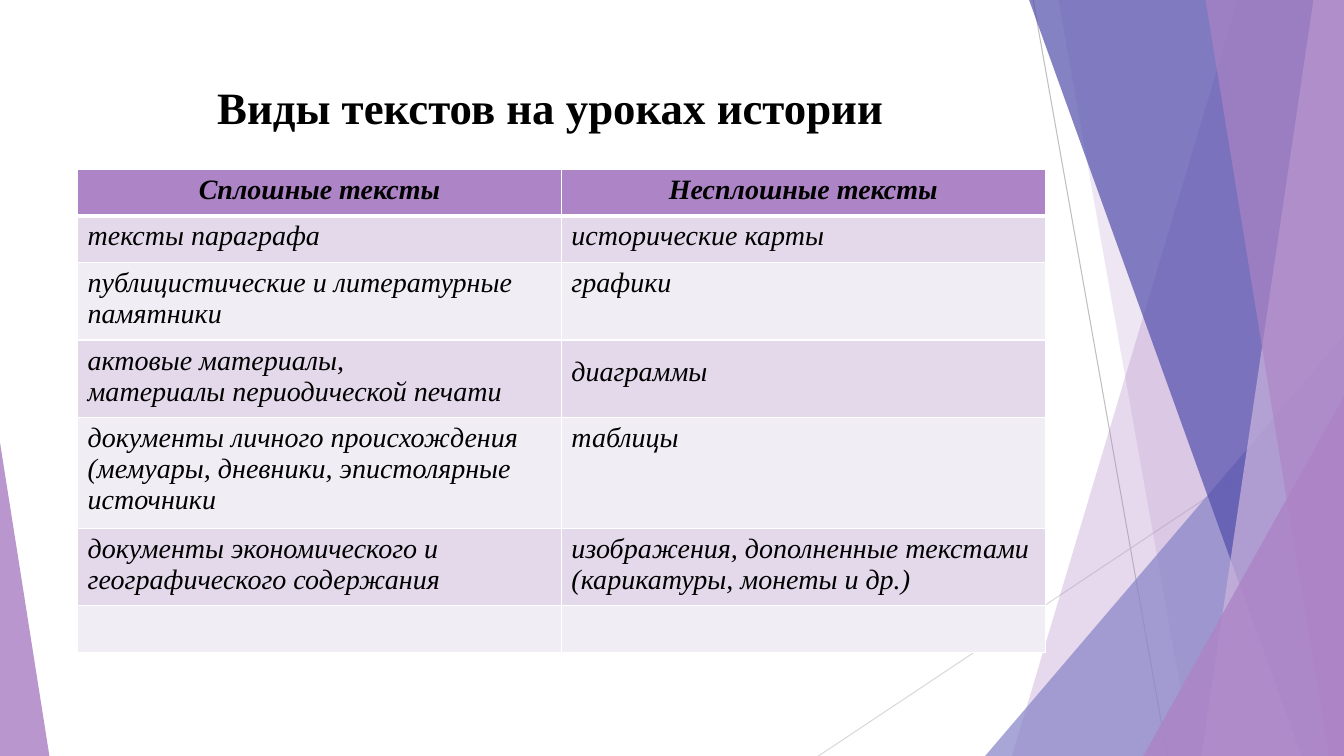
from dataclasses import dataclass

from lxml.etree import SubElement
from pptx import Presentation
from pptx.dml.color import RGBColor
from pptx.enum.shapes import MSO_CONNECTOR as Connector, MSO_SHAPE as Preset
from pptx.enum.text import MSO_ANCHOR as Anchor, PP_ALIGN as Align
from pptx.oxml.ns import qn
from pptx.util import Pt


@dataclass(frozen=True)
class Theme:
    font: str = "Times New Roman"
    title_size: int = 32
    table_size: int = 20
    text: str = "000000"
    white: str = "FFFFFF"
    lilac: str = "AD84C6"
    pale_lilac: str = "CEB5DD"
    periwinkle: str = "8784C7"
    indigo: str = "524EAB"
    band_dark: str = "E3D9EA"
    band_light: str = "F1EDF5"
    dark_line: str = "BFBFBF"
    light_line: str = "D9D9D9"


THEME = Theme()
WIDTH, HEIGHT = 960, 540

RAYS = [
    ((738, 0), (833.8, HEIGHT), THEME.dark_line),
    ((WIDTH, 290.2), (584.6, HEIGHT), THEME.light_line),
]

# Each band runs from a top x to a bottom x and reaches the right slide edge.
BACK_BANDS = [
    (884.2, 722.9, THEME.lilac, 30),
    (756, 851.8, THEME.lilac, 20),
]
FRONT_BANDS = [
    (735.1, 929.5, THEME.indigo, 70),
    (938.2, 858.2, THEME.pale_lilac, 70),
    (861.1, 949, THEME.lilac, 65),
]

TABLE_LEFT, TABLE_TOP = 55.4, 120.8
COLUMN_WIDTH = 345.6
ROW_HEIGHTS = [33.4, 33.4, 44.6, 44.6, 64, 44.6, 33.4]
ROWS = [
    ("Сплошные тексты", "Несплошные тексты"),
    ("тексты параграфа", "исторические карты"),
    ("публицистические и литературные памятники", "графики"),
    ("актовые материалы,\nматериалы периодической печати", "диаграммы"),
    ("документы личного происхождения (мемуары, дневники, эпистолярные источники",
     "таблицы"),
    ("документы экономического и географического содержания",
     "изображения, дополненные текстами (карикатуры, монеты и др.)"),
    ("", ""),
]
LOWERED_CELL = (3, 1)


def write_text(frame, text, *, size, bold=False, italic=False,
               align=Align.LEFT, spacing=None):
    """Fill a text frame, one paragraph for each line of text."""
    frame.word_wrap = True
    frame.text = text
    for paragraph in frame.paragraphs:
        paragraph.alignment = align
        if spacing:
            paragraph.line_spacing = spacing
        for font in [paragraph.font, *(run.font for run in paragraph.runs)]:
            font.name = THEME.font
            font.size = Pt(size)
            font.bold = bold
            font.italic = italic
            font.color.rgb = RGBColor.from_string(THEME.text)


def paint(shape, color, opacity):
    """Give a shape a translucent fill with no line or shadow."""
    shape.shadow.inherit = False
    shape.line.fill.background()
    shape.fill.solid()
    shape.fill.fore_color.rgb = RGBColor.from_string(color)
    color_element = shape.fill._xPr.find(f".//{qn('a:srgbClr')}")
    SubElement(color_element, qn("a:alpha"), val=str(opacity * 1000))


def add_ray(slide, start, end, color):
    ray = slide.shapes.add_connector(
        Connector.STRAIGHT, *(Pt(value) for value in (*start, *end)))
    ray.line.color.rgb = RGBColor.from_string(color)
    ray.line.width = Pt(0.75)
    SubElement(ray._element.spPr, qn("a:effectLst"))


def add_band(slide, top_x, bottom_x, color, opacity):
    outline = slide.shapes.build_freeform(Pt(top_x), 0)
    corners = [(WIDTH, 0), (WIDTH, HEIGHT), (bottom_x, HEIGHT)]
    outline.add_line_segments([(Pt(x), Pt(y)) for x, y in corners], close=True)
    paint(outline.convert_to_shape(), color, opacity)


def add_corner(slide, left, width, height, apex, color, opacity):
    """Add a right triangle that stands on the bottom edge of the slide."""
    corner = slide.shapes.add_shape(
        Preset.ISOSCELES_TRIANGLE,
        Pt(left), Pt(HEIGHT - height), Pt(width), Pt(height))
    corner.adjustments[0] = apex
    paint(corner, color, opacity)


def add_title(slide, text):
    title = slide.shapes.add_textbox(Pt(55.4), Pt(46.8), Pt(675.4), Pt(58.3))
    title.text_frame.vertical_anchor = Anchor.MIDDLE
    write_text(title.text_frame, text, size=THEME.title_size, bold=True,
               align=Align.CENTER)


def set_borders(cell, top, bottom):
    properties = cell._tc.get_or_add_tcPr()
    for side, width in (("L", 1), ("R", 1), ("T", top), ("B", bottom)):
        border = SubElement(properties, qn(f"a:ln{side}"), w=str(Pt(width)))
        fill = SubElement(border, qn("a:solidFill"))
        SubElement(fill, qn("a:srgbClr"), val=THEME.white)


def format_cell(cell, text, row, column):
    is_header = row == 0
    is_lowered = (row, column) == LOWERED_CELL
    set_borders(cell, top=3 if row == 1 else 1, bottom=3 if is_header else 1)
    band = THEME.band_dark if row % 2 else THEME.band_light
    cell.fill.solid()
    cell.fill.fore_color.rgb = RGBColor.from_string(
        THEME.lilac if is_header else band)
    if is_lowered:
        cell.margin_top, cell.margin_right = Pt(10.1), Pt(5.8)
    write_text(cell.text_frame, text, size=THEME.table_size,
               bold=is_header, italic=True,
               align=Align.CENTER if is_header else Align.LEFT,
               spacing=1.07 if is_lowered else None)


def add_text_types_table(slide):
    table = slide.shapes.add_table(
        len(ROWS), 2, Pt(TABLE_LEFT), Pt(TABLE_TOP),
        Pt(2 * COLUMN_WIDTH), Pt(sum(ROW_HEIGHTS))).table
    table.first_row = table.horz_banding = False
    for column in table.columns:
        column.width = Pt(COLUMN_WIDTH)
    for row, (height, texts) in enumerate(zip(ROW_HEIGHTS, ROWS)):
        table.rows[row].height = Pt(height)
        for column, text in enumerate(texts):
            format_cell(table.cell(row, column), text, row, column)


def main():
    deck = Presentation()
    deck.slide_width, deck.slide_height = Pt(WIDTH), Pt(HEIGHT)
    slide = deck.slides.add_slide(deck.slide_layouts[6])

    for ray in RAYS:
        add_ray(slide, *ray)
    for band in BACK_BANDS:
        add_band(slide, *band)
    add_corner(slide, 703.7, 256.3, 300.2, 1, THEME.periwinkle, 72)
    for band in FRONT_BANDS:
        add_band(slide, *band)
    add_corner(slide, 816.7, 143.3, 257, 1, THEME.lilac, 80)
    add_corner(slide, 0, 35.3, 223.9, 0, THEME.lilac, 85)

    add_title(slide, "Виды текстов на уроках истории")
    add_text_types_table(slide)
    deck.save("out.pptx")


if __name__ == "__main__":
    main()
